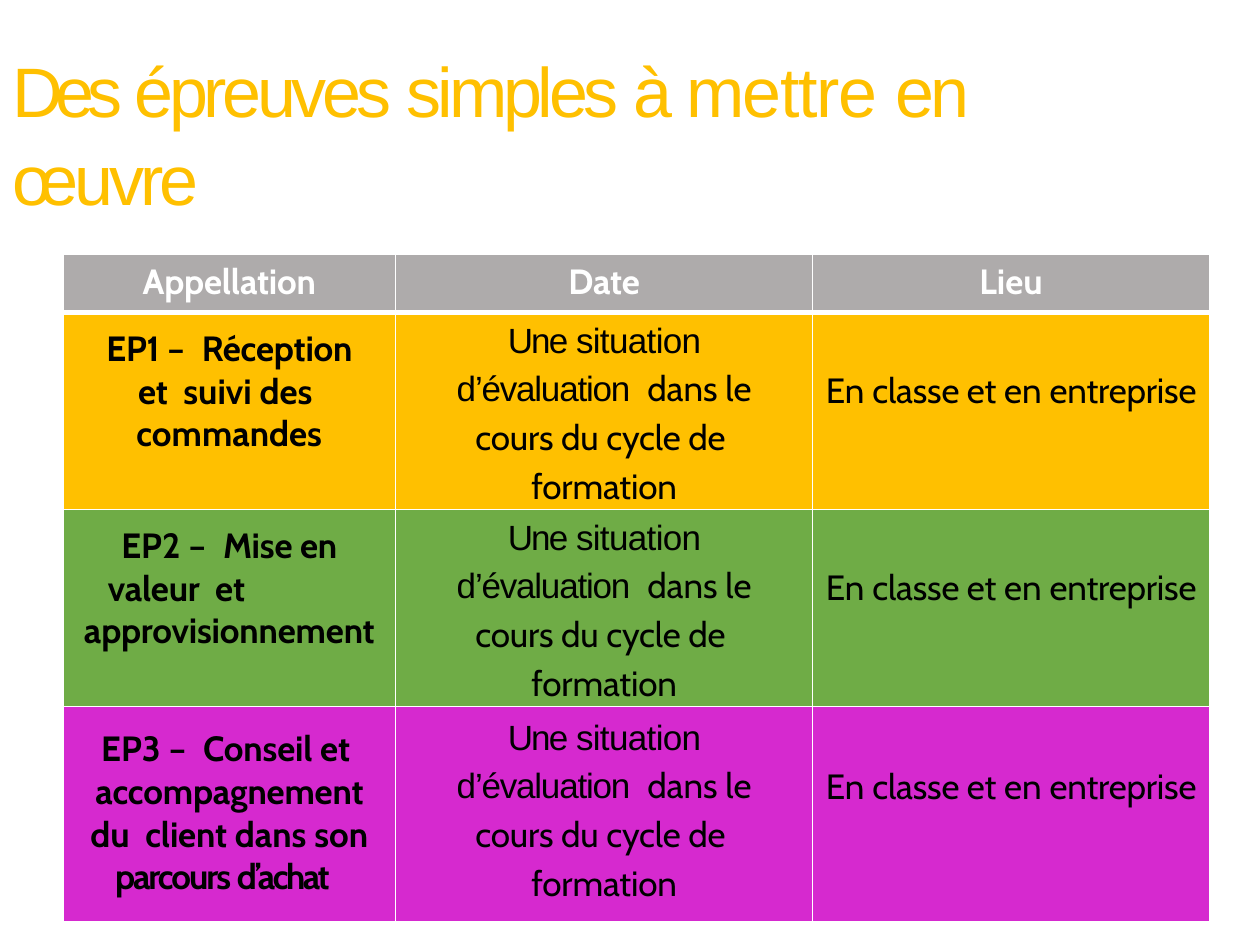
from pptx import Presentation
from pptx.dml.color import RGBColor
from pptx.enum.text import PP_ALIGN
from pptx.oxml.ns import qn
from pptx.util import Inches, Pt
from lxml.etree import SubElement

COLORS = {
    "title": "FFC000", "white": "FFFFFF", "text": "000000", "header": "AEABAB",
    "EP1": "FFC000", "EP2": "6FAC46", "EP3": "D629CF",
}

# Runs are (text, letter spacing in points[, font])
TITLE = [("Des ", -4.1), ("épreuves ", -2.5), ("simples ", -2.4), ("à ", -3.5),
         ("mettre ", -0.8), ("en ", -2.1), ("œuvre", -2.3)]
HEADINGS = [("Appellation", -0.1), ("Date", -0.1), ("Lieu", 0)]
DATE = [("Une ", -1.1, "Arial"), ("situation ", -0.4, "Arial"),
        ("d’évaluation  ", -0.7, "Arial"), ("dans le ", 0),
        ("cours du cycle de  formation", -0.1)]
PLACE = [("En ", 0), ("classe et ", -0.1), ("en ", 0), ("entreprise", -0.1)]

# Each exam name is a list of (left margin, right margin, runs);
# top insets are for the name, date and place cells
EXAMS = [
    {"code": "EP1", "insets": (0.12, 0.03, 0.45), "name": [
        (0.25, 0.25, [("EP1 ", -0.1), ("– ", 2.6), ("Réception et  ", -0.1),
                      ("suivi des  commandes", 0)])]},
    {"code": "EP2", "insets": (0.12, 0.03, 0.45), "name": [
        (0.12, 0.12, [("EP2 ", 0), ("– ", 2.6), ("Mise en", -0.1)]),
        (0.12, 0.96, [("valeur  et", -0.1)]),
        (0.12, 0.12, [("approvisionnement", -0.1)])]},
    {"code": "EP3", "insets": (0.17, 0.05, 0.47), "name": [
        (0.11, 0.11, [("EP3 ", 0), ("– ", 2.6), ("Conseil et  accompagnement ", -0.1),
                      ("du  ", 0), ("client ", -0.1), ("dans son", 0)]),
        (0, 0.11, [("parcours ", -1.2), ("d’achat", -1.4)])]},
]
COLUMN_WIDTHS = [2.64, 3.31, 3.15]
ROW_HEIGHTS = [0.46, 1.28, 1.28, 1.71]
HEADER_INSET = 0.05
DATE_MARGIN = 0.3


def rgb(name):
    return RGBColor.from_string(COLORS[name])


def write_runs(paragraph, runs, size, color, bold=False, font="Cabin"):
    for text, spacing, *own_font in runs:
        run = paragraph.add_run()
        run.text = text
        run.font.name = own_font[0] if own_font else font
        run.font.size = Pt(size)
        run.font.bold = bold
        run.font.color.rgb = rgb(color)
        run.font._element.set("spc", str(round(spacing * 100)))


def draw_borders(cell, top=1, bottom=1):
    properties = cell._tc.get_or_add_tcPr()
    widths = {"a:lnL": 1, "a:lnR": 1, "a:lnT": top, "a:lnB": bottom}
    for position, (side, width) in enumerate(widths.items()):
        line = SubElement(properties, qn(side), w=str(Pt(width)))
        fill = SubElement(line, qn("a:solidFill"))
        SubElement(fill, qn("a:srgbClr"), val=COLORS["white"])
        properties.insert(position, line)


def fill_cell(cell, paragraphs, inset, background, color="text", bold=False, line_spacing=None):
    cell.fill.solid()
    cell.fill.fore_color.rgb = rgb(background)
    cell.margin_left = cell.margin_right = cell.margin_bottom = 0
    cell.margin_top = Inches(inset)
    frame = cell.text_frame
    for index, (left, right, runs) in enumerate(paragraphs):
        paragraph = frame.add_paragraph() if index else frame.paragraphs[0]
        paragraph.alignment = PP_ALIGN.CENTER
        if line_spacing:
            paragraph.line_spacing = line_spacing
        margins = paragraph._p.get_or_add_pPr()
        margins.set("marL", str(Inches(left)))
        margins.set("marR", str(Inches(right)))
        write_runs(paragraph, runs, 20, color, bold)


def add_title(slide):
    title = slide.shapes.add_textbox(Inches(0.09), Inches(0.34), Inches(8.97), Inches(1.35))
    frame = title.text_frame
    frame.word_wrap = True
    frame.margin_left = Inches(0.01)
    frame.margin_top = frame.margin_right = frame.margin_bottom = 0
    frame.paragraphs[0].line_spacing = 1.05
    write_runs(frame.paragraphs[0], TITLE, 40, "title", font="Arial")


def add_exam_table(slide):
    table = slide.shapes.add_table(
        len(ROW_HEIGHTS), len(COLUMN_WIDTHS), Inches(0.5), Inches(2.02),
        Inches(sum(COLUMN_WIDTHS)), Inches(sum(ROW_HEIGHTS))).table
    table.horz_banding = False
    for column, width in zip(table.columns, COLUMN_WIDTHS):
        column.width = Inches(width)
    for row, height in zip(table.rows, ROW_HEIGHTS):
        row.height = Inches(height)

    for column, heading in enumerate(HEADINGS):
        cell = table.cell(0, column)
        fill_cell(cell, [(0, 0, [heading])], HEADER_INSET, "header", "white", bold=True)
        draw_borders(cell, bottom=3)

    for row, exam in enumerate(EXAMS, start=1):
        contents = [
            (exam["name"], True, None),
            ([(DATE_MARGIN, DATE_MARGIN, DATE)], False, 1.15),
            ([(0, 0, PLACE)], False, None),
        ]
        for column, (paragraphs, bold, line_spacing) in enumerate(contents):
            cell = table.cell(row, column)
            fill_cell(cell, paragraphs, exam["insets"][column], exam["code"],
                      bold=bold, line_spacing=line_spacing)
            draw_borders(cell, top=3 if row == 1 else 1)


def main():
    presentation = Presentation()
    presentation.slide_width = Inches(10)
    presentation.slide_height = Inches(7.5)
    slide = presentation.slides.add_slide(presentation.slide_layouts[6])
    add_title(slide)
    add_exam_table(slide)
    presentation.save("out.pptx")


if __name__ == "__main__":
    main()
